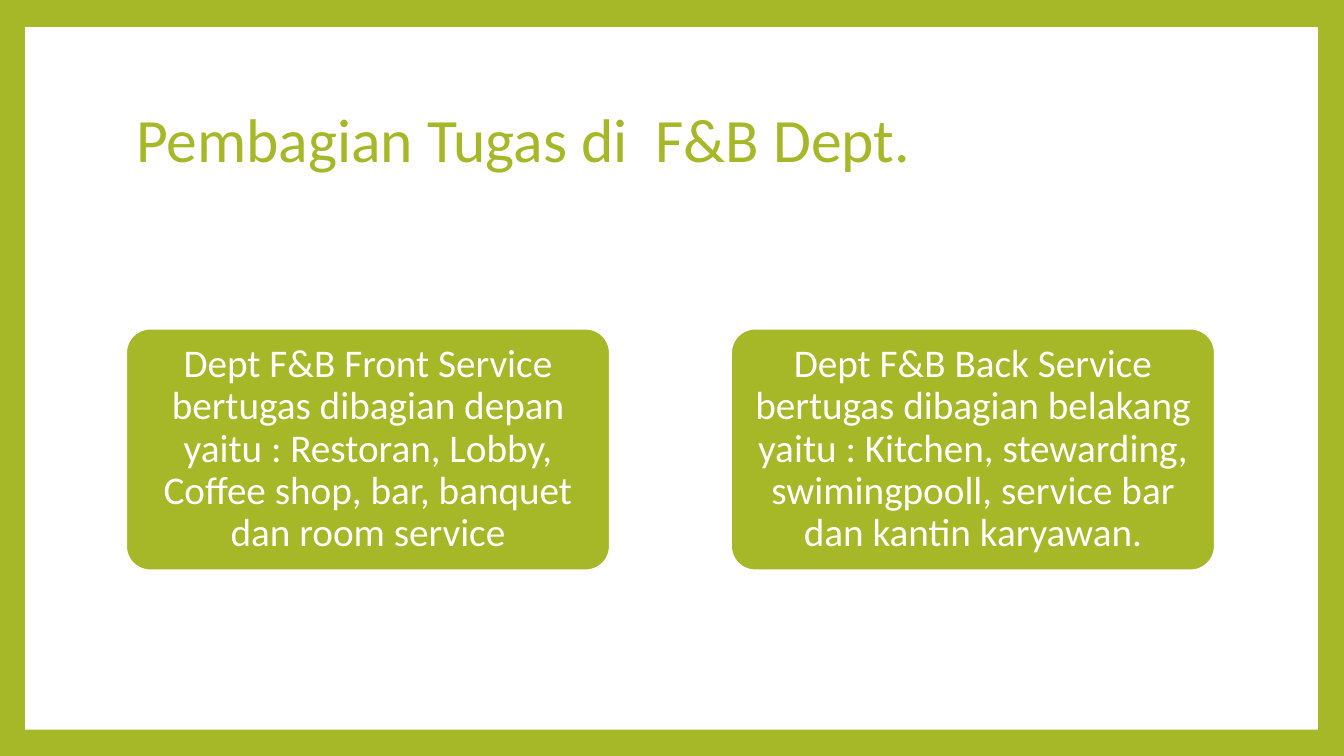
import pptx
import pptx.util
import pptx.dml.color
import pptx.enum.shapes
import pptx.enum.text

Inches, Pt = pptx.util.Inches, pptx.util.Pt
SHAPES = pptx.enum.shapes.MSO_SHAPE
ALIGN = pptx.enum.text.PP_ALIGN
COLORS = {"green": "A6B727", "white": "FFFFFF"}
SLIDE_W, SLIDE_H = 13.33, 7.5
LEFT, CARD_W, CARD_H, CARD_TOP, COLUMN_STEP = 1.25, 4.8, 2.4, 3.26, 6.0
DUTIES = [
    "Dept F&B Front Service bertugas dibagian depan yaitu : Restoran, Lobby, "
    "Coffee shop, bar, banquet dan room service",
    "Dept F&B Back Service bertugas dibagian belakang yaitu : Kitchen, stewarding, "
    "swimingpooll, service bar dan kantin karyawan.",
]


def rgb(name):
    return pptx.dml.color.RGBColor.from_string(COLORS[name])


def write(frame, text, size, color, align):
    frame.word_wrap = True
    frame.auto_size = pptx.enum.text.MSO_AUTO_SIZE.NONE
    frame.vertical_anchor = pptx.enum.text.MSO_ANCHOR.MIDDLE
    paragraph = frame.paragraphs[0]
    paragraph.alignment = align
    paragraph.line_spacing = 0.9
    run = paragraph.add_run()
    run.text = text
    run.font.name = "Calibri"
    run.font.size = Pt(size)
    run.font.color.rgb = rgb(color)


presentation = pptx.Presentation()
presentation.slide_width = Inches(SLIDE_W)
presentation.slide_height = Inches(SLIDE_H)
slide = presentation.slides.add_slide(presentation.slide_layouts[5])

# Green border: green background with a white panel behind everything else
slide.background.fill.solid()
slide.background.fill.fore_color.rgb = rgb("green")
panel = slide.shapes.add_shape(
    SHAPES.RECTANGLE, Inches(0.25), Inches(0.27), Inches(12.82), Inches(6.97))
panel.shadow.inherit = False
panel.fill.solid()
panel.fill.fore_color.rgb = rgb("white")
panel.line.fill.background()
slide.shapes.title._element.addprevious(panel._element)

# Title
title = slide.shapes.title
title.left, title.top = Inches(LEFT), Inches(0.67)
title.width, title.height = Inches(COLUMN_STEP + CARD_W), Inches(1.48)
write(title.text_frame, "Pembagian Tugas di  F&B Dept.", 44, "green", ALIGN.LEFT)

# One card per department, in two columns
for column, duty in enumerate(DUTIES):
    card = slide.shapes.add_shape(
        SHAPES.ROUNDED_RECTANGLE, Inches(LEFT + column * COLUMN_STEP),
        Inches(CARD_TOP), Inches(CARD_W), Inches(CARD_H))
    card.adjustments[0] = 0.1
    card.shadow.inherit = False
    card.fill.solid()
    card.fill.fore_color.rgb = rgb("green")
    card.line.color.rgb = rgb("white")
    card.line.width = Pt(1.5)
    frame = card.text_frame
    frame.margin_left = frame.margin_right = Inches(0.06)
    frame.margin_top = frame.margin_bottom = Inches(0.04)
    write(frame, duty, 28, "white", ALIGN.CENTER)

presentation.save("out.pptx")
